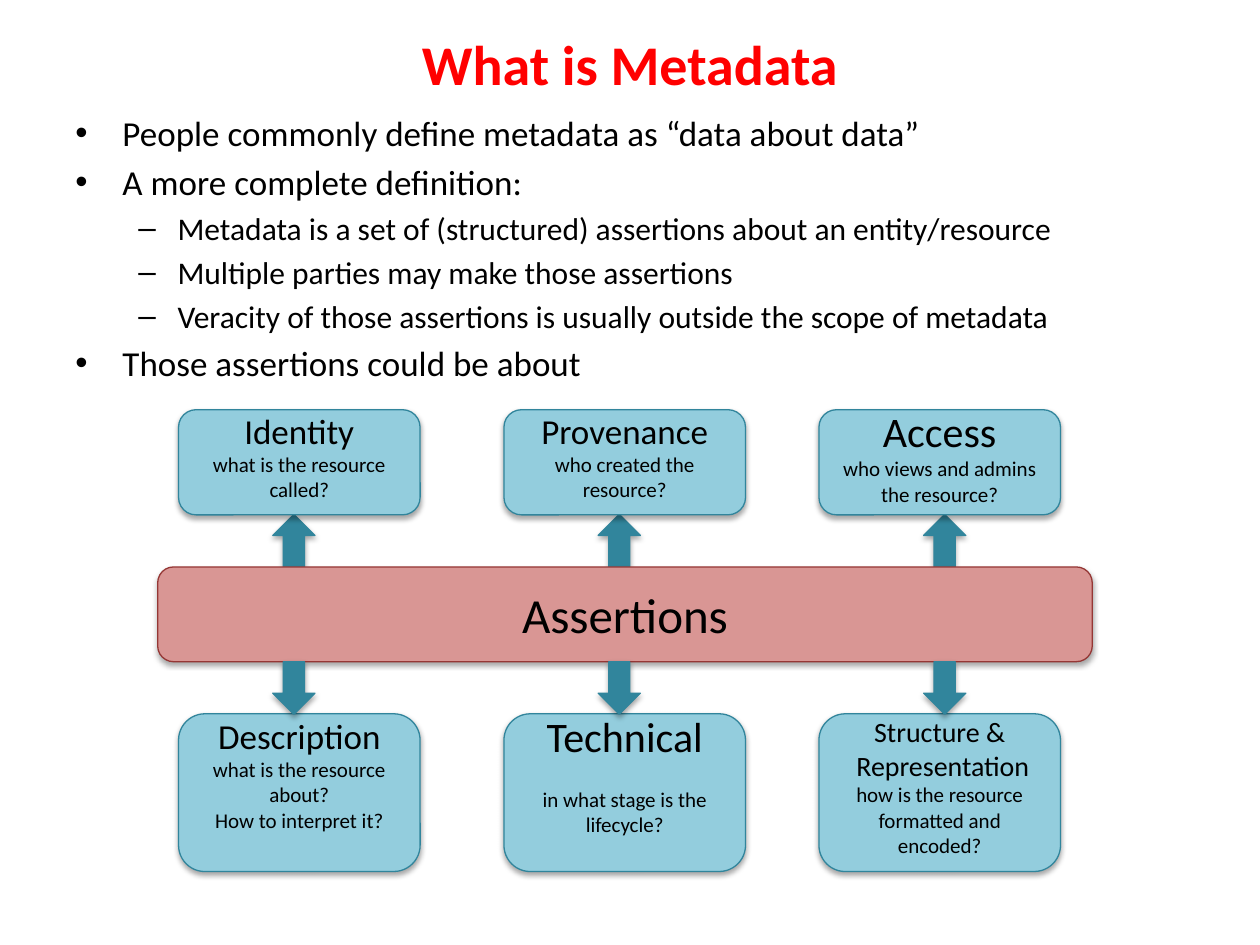
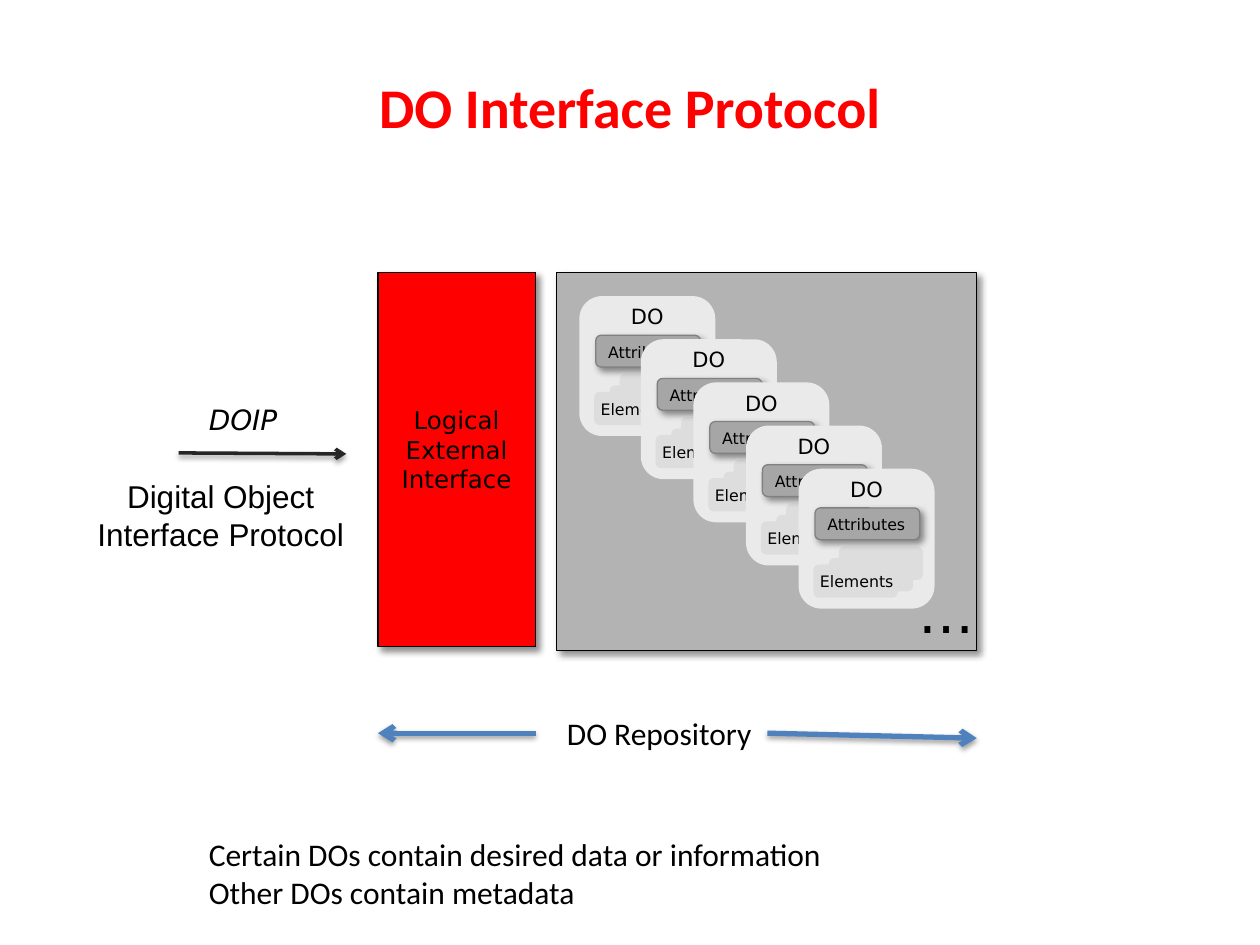
from dataclasses import dataclass
from typing import Any, Optional

from lxml import etree
from pptx import Presentation
from pptx.dml.color import RGBColor
from pptx.enum import shapes, text
from pptx.oxml import ns
from pptx.util import Cm, Pt

BLACK = RGBColor(0x00, 0x00, 0x00)
RED = RGBColor(0xFF, 0x00, 0x00)
TEAL = RGBColor(0x31, 0x85, 0x9C)
AQUA = RGBColor(0x93, 0xCD, 0xDD)
ROSE = RGBColor(0xD9, 0x96, 0x94)
WINE = RGBColor(0x95, 0x37, 0x35)
BLUE = RGBColor(0x4F, 0x81, 0xBD)
INK = RGBColor(0x26, 0x26, 0x26)
STONE = RGBColor(0xB3, 0xB3, 0xB3)
STEEL = RGBColor(0xA6, 0xA6, 0xA6)
SLATE = RGBColor(0x80, 0x80, 0x80)
PALE = RGBColor(0xEA, 0xEA, 0xEA)
MIST = RGBColor(0xDD, 0xDD, 0xDD)

BODY, SANS, PLAIN = "Calibri", "DejaVu Sans", "Arial"
KIND = shapes.MSO_SHAPE
ROUND = KIND.ROUNDED_RECTANGLE
LEFT, MID = text.PP_ALIGN.LEFT, text.PP_ALIGN.CENTER


@dataclass(frozen=True)
class Place:
    """A frame on the slide, in centimetres."""
    x: float
    y: float
    w: float
    h: float

    def size(self) -> tuple[int, int, int, int]:
        """Give the frame as lengths."""
        return Cm(self.x), Cm(self.y), Cm(self.w), Cm(self.h)

    def shift(self, x: float, y: float) -> "Place":
        """Give the frame moved by x and y."""
        return Place(self.x + x, self.y + y, self.w, self.h)


@dataclass(frozen=True)
class Shade:
    """A soft shadow: strength in percent, lengths in points, angle in degrees."""
    alpha: int
    blur: float
    dist: float
    angle: int


@dataclass(frozen=True)
class Line:
    """One line of text with its look."""
    words: str
    size: float
    font: str = BODY
    color: RGBColor = BLACK
    bold: bool = False
    slant: bool = False
    gap: float = 0


@dataclass(frozen=True)
class Point:
    """A bullet of the list."""
    words: str
    deep: bool = False


@dataclass(frozen=True)
class Topic:
    """A box of the chart, with the space kept free below its text."""
    x: float
    lines: tuple[Line, ...]
    rest: float


@dataclass(frozen=True)
class Arrow:
    """A straight line with a head at its end."""
    x: float
    y: float
    to_x: float
    to_y: float
    color: RGBColor
    width: float


@dataclass(frozen=True)
class Label:
    """A free text that does not wrap."""
    place: Place
    lines: tuple[Line, ...]
    align: text.PP_ALIGN = LEFT


SOFT = Shade(35, 3.1, 1.8, 90)
DEEP = Shade(43, 4, 3, 45)
FAINT = Shade(38, 3.1, 1.6, 90)

POINTS = (
    Point("People commonly define metadata as “data about data”"),
    Point("A more complete definition:"),
    Point("Metadata is a set of (structured) assertions about an entity/resource", True),
    Point("Multiple parties may make those assertions", True),
    Point("Veracity of those assertions is usually outside the scope of metadata", True),
    Point("Those assertions could be about"),
)
COLS = (3.6, 10.16, 16.51)
UPPER = (
    Topic(COLS[0], (Line("Identity", 20), Line("what is the resource called?", 12)), 0.26),
    Topic(COLS[1], (Line("Provenance", 20), Line("who created the resource?", 12)), 0.26),
    Topic(COLS[2], (Line("Access", 24), Line("who views and admins the resource?", 12)), 0.26),
)
LOWER = (
    Topic(COLS[0], (Line("Description", 20), Line("what is the resource about?", 12),
                    Line("How to interpret it?", 12)), 0.77),
    Topic(COLS[1], (Line("Technical", 24),
                    Line("in what stage is the lifecycle?", 12, gap=14.6)), 0.77),
    Topic(COLS[2], (Line("Structure &", 16), Line(" Representation", 16),
                    Line("how is the resource formatted and encoded?", 12)), 0.26),
)
LABELS = (
    Label(Place(3.96, 8, 2.16, 0.94), (Line("DOIP", 16, SANS, slant=True),)),
    Label(Place(1.68, 9.5, 5.54, 1.8),
          (Line("Digital Object", 18, PLAIN), Line("Interface Protocol", 18, PLAIN)), MID),
    Label(Place(7.82, 8.05, 2.77, 2.06),
          tuple(Line(word, 14, SANS) for word in ("Logical", "External", "Interface")), MID),
    Label(Place(18.26, 11.51, 1.45, 1.6), (Line("…", 32, SANS),)),
    Label(Place(11.18, 14.27, 4.29, 1.02), (Line("DO Repository", 18),)),
    Label(Place(3.96, 16.71, 13.06, 1.8),
          (Line("Certain DOs contain desired data or information", 18),
           Line("Other DOs contain metadata", 18))),
)
ARROWS = (
    Arrow(3.6, 9.13, 6.98, 9.15, INK, 2),
    Arrow(15.47, 14.78, 19.69, 14.88, BLUE, 3),
    Arrow(10.8, 14.78, 7.62, 14.78, BLUE, 3),
)


def cast(item: Any, shade: Optional[Shade]) -> None:
    """Give an item its shadow, or none."""
    props = item._element.spPr
    effect = props.find(ns.qn("a:effectLst"))
    if effect is None:
        effect = etree.SubElement(props, ns.qn("a:effectLst"))
    if shade:
        outer = etree.SubElement(
            effect, ns.qn("a:outerShdw"), blurRad=str(Pt(shade.blur)),
            dist=str(Pt(shade.dist)), dir=str(shade.angle * 60000), rotWithShape="0")
        tint = etree.SubElement(outer, ns.qn("a:srgbClr"), val=str(BLACK))
        etree.SubElement(tint, ns.qn("a:alpha"), val=str(shade.alpha * 1000))


def write(frame: Any, lines: tuple[Line, ...], align: text.PP_ALIGN) -> None:
    """Fill a text frame, one paragraph a line."""
    for i, line in enumerate(lines):
        para = frame.paragraphs[0] if i == 0 else frame.add_paragraph()
        para.alignment = align
        para.space_before = Pt(line.gap)
        run = para.add_run()
        run.text = line.words
        font = run.font
        font.name, font.size = line.font, Pt(line.size)
        font.bold, font.italic = line.bold, line.slant
        font.color.rgb = line.color


def draw(tree: Any, kind: Any, place: Place, fill: RGBColor, edge: Optional[RGBColor] = None,
         shade: Optional[Shade] = None) -> Any:
    """Add a filled shape."""
    item = tree.add_shape(kind, *place.size())
    item.fill.solid()
    item.fill.fore_color.rgb = fill
    if edge is None:
        item.line.fill.background()
    else:
        item.line.color.rgb = edge
        item.line.width = Pt(0.75)
    item.shadow.inherit = False
    cast(item, shade)
    return item


def label(tree: Any, note: Label) -> None:
    """Add a text that does not wrap."""
    frame = tree.add_textbox(*note.place.size()).text_frame
    frame.word_wrap = False
    frame.auto_size = text.MSO_AUTO_SIZE.SHAPE_TO_FIT_TEXT
    write(frame, note.lines, note.align)


def title(tree: Any, words: str, y: float) -> None:
    """Add the slide title."""
    frame = tree.add_textbox(*Place(1.27, y, 22.86, 2.54).size()).text_frame
    frame.word_wrap = True
    frame.vertical_anchor = text.MSO_ANCHOR.MIDDLE
    write(frame, (Line(words, 32, color=RED, bold=True),), MID)


def bullets(tree: Any) -> None:
    """Add the list with its two levels."""
    frame = tree.add_textbox(*Place(1.27, 2.12, 22.86, 5.93).size()).text_frame
    frame.word_wrap = True
    sizes = [18 if point.deep else 20 for point in POINTS]
    write(frame, tuple(Line(point.words, size, gap=size / 5)
                       for point, size in zip(POINTS, sizes)), LEFT)
    for point, para in zip(POINTS, frame.paragraphs):
        left, hang, mark = (2.06, 0.79, "–") if point.deep else (0.95, 0.95, "•")
        props = para._p.get_or_add_pPr()
        props.set("marL", str(Cm(left)))
        props.set("indent", str(-Cm(hang)))
        etree.SubElement(props, ns.qn("a:buFont"), typeface=PLAIN)
        etree.SubElement(props, ns.qn("a:buChar"), char=mark)


def block(tree: Any, place: Place, fill: RGBColor, edge: RGBColor,
          lines: tuple[Line, ...], rest: float = 0) -> None:
    """Add a rounded box with centred text."""
    frame = draw(tree, ROUND, place, fill, edge, SOFT).text_frame
    frame.word_wrap = True
    frame.vertical_anchor = text.MSO_ANCHOR.MIDDLE
    frame.margin_top, frame.margin_bottom = 0, Cm(rest)
    write(frame, lines, MID)


def prongs(tree: Any, kind: Any, y: float) -> None:
    """Add a row of three block arrows."""
    for i in range(3):
        draw(tree, kind, Place(5.5 + 6.56 * i, y, 0.85, 1.06), TEAL, TEAL, SOFT)


def card(tree: Any, x: float, y: float) -> None:
    """Add one digital object as a group."""
    group = tree.add_group_shape().shapes
    draw(group, ROUND, Place(x, y, 2.74, 2.82), PALE)
    label(group, Label(Place(0.79, 0.03, 1.17, 0.76).shift(x, y), (Line("DO", 12, SANS),)))
    for dx, dy in ((0.81, 1.57), (0.61, 1.8), (0.3, 1.93)):
        draw(group, ROUND, Place(x + dx, y + dy, 1.7, 0.67), MIST)
    label(group, Label(Place(0.18, 1.96, 1.98, 0.64).shift(x, y), (Line("Elements", 9, SANS),)))
    draw(group, ROUND, Place(0.33, 0.79, 2.11, 0.64).shift(x, y), STEEL, SLATE, DEEP)
    label(group, Label(Place(0.33, 0.81, 2.08, 0.64).shift(x, y), (Line("Attributes", 9, SANS),)))


def link(tree: Any, arrow: Arrow) -> None:
    """Add a line with an arrowhead."""
    item = tree.add_connector(shapes.MSO_CONNECTOR.STRAIGHT, Cm(arrow.x), Cm(arrow.y),
                              Cm(arrow.to_x), Cm(arrow.to_y))
    item.line.color.rgb = arrow.color
    item.line.width = Pt(arrow.width)
    etree.SubElement(item.line._get_or_add_ln(), ns.qn("a:tailEnd"), type="arrow")
    cast(item, FAINT)


def meta(tree: Any) -> None:
    """Build the slide on metadata."""
    prongs(tree, KIND.UP_ARROW, 10.37)
    bullets(tree)
    title(tree, "What is Metadata", 0)
    block(tree, Place(3.18, 11.43, 18.84, 1.91), ROSE, WINE, (Line("Assertions", 28),))
    for row, y, high in ((UPPER, 8.26, 2.12), (LOWER, 14.39, 3.18)):
        for topic in row:
            block(tree, Place(topic.x, y, 4.87, high), AQUA, TEAL, topic.lines, topic.rest)
    prongs(tree, KIND.DOWN_ARROW, 13.34)


def access(tree: Any) -> None:
    """Build the slide on the protocol."""
    title(tree, "DO Interface Protocol", 0.87)
    draw(tree, KIND.RECTANGLE, Place(11.22, 5.5, 8.47, 7.62), STONE, BLACK, DEEP)
    draw(tree, KIND.RECTANGLE, Place(7.62, 5.5, 3.18, 7.54), RED, BLACK, DEEP)
    for note in LABELS:
        label(tree, note)
    for i in range(5):
        card(tree, 11.86 + 1.06 * i if i else 11.68, 5.97 + 0.87 * i)
    for arrow in ARROWS:
        link(tree, arrow)


def main() -> None:
    """Build and save both slides."""
    deck = Presentation()
    deck.slide_width, deck.slide_height = Cm(25.4), Cm(19.05)
    for build in (meta, access):
        build(deck.slides.add_slide(deck.slide_layouts[6]).shapes)
    deck.save("out.pptx")


if __name__ == "__main__":
    main()
